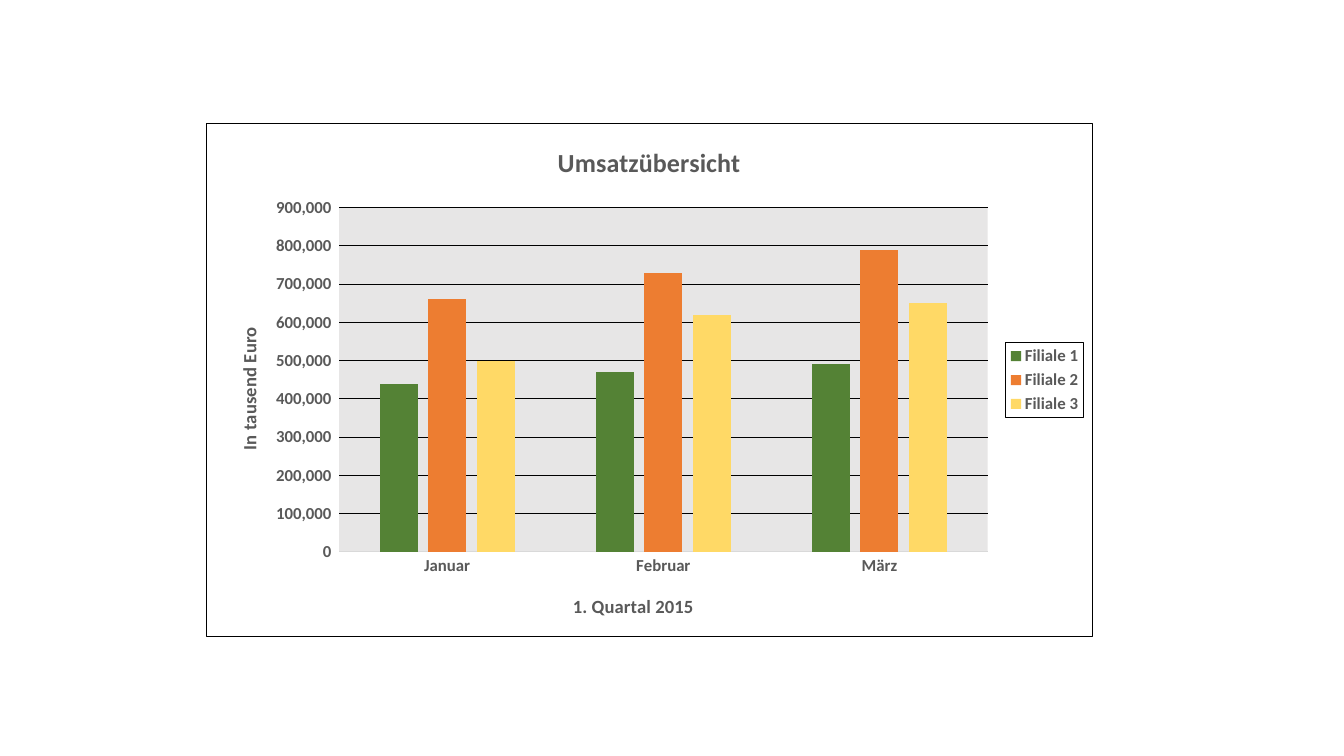
"""Builds a slide with a clustered column chart of first-quarter sales by branch."""
from dataclasses import dataclass

from lxml.etree import SubElement
from pptx import Presentation
from pptx.chart.data import CategoryChartData
from pptx.dml.color import RGBColor
from pptx.enum.chart import XL_CHART_TYPE, XL_LEGEND_POSITION, XL_TICK_MARK
from pptx.oxml import parse_xml
from pptx.oxml.ns import nsdecls, qn
from pptx.util import Pt


@dataclass
class Theme:
    face: str = "Calibri"
    ink: str = "595959"
    rule: str = "000000"
    base: str = "D9D9D9"
    wall: str = "E7E6E6"
    bars: tuple = ("548235", "ED7D31", "FFD966")
    head: float = 18.6
    name: float = 13.3
    text: float = 12
    line: float = 0.75


theme = Theme()


def style(font, size):
    font.name = theme.face
    font.size = Pt(size)
    font.bold = True
    font.color.rgb = RGBColor.from_string(theme.ink)


def place(node, index, **spots):
    for old in node.findall(qn("c:layout")):
        node.remove(old)
    layout = parse_xml(f"<c:layout {nsdecls('c')}/>")
    manual = SubElement(layout, qn("c:manualLayout"))
    for key, value in spots.items():
        SubElement(manual, qn(f"c:{key}")).set("val", str(value))
    node.insert(index, layout)


deck = Presentation()
deck.slide_width, deck.slide_height = Pt(960), Pt(540)
slide = deck.slides.add_slide(deck.slide_layouts[6])

data = CategoryChartData()
data.categories = ["Januar", "Februar", "März"]
data.add_series("Filiale 1", (440000, 470000, 490000))
data.add_series("Filiale 2", (660000, 730000, 790000))
data.add_series("Filiale 3", (500000, 620000, 650000))
chart = slide.shapes.add_chart(
    XL_CHART_TYPE.COLUMN_CLUSTERED, Pt(147), Pt(88), Pt(633.5), Pt(367), data
).chart
style(chart.font, theme.text)

plot = chart.plots[0]
plot.gap_width = 214
plot.overlap = -27
plot.vary_by_categories = False
for series, color in zip(plot.series, theme.bars):
    series.format.fill.solid()
    series.format.fill.fore_color.rgb = RGBColor.from_string(color)

months, sales = chart.category_axis, chart.value_axis
for axis in (months, sales):
    axis.major_tick_mark = XL_TICK_MARK.NONE
    axis.minor_tick_mark = XL_TICK_MARK.NONE
    style(axis.tick_labels.font, theme.text)
months.format.line.color.rgb = RGBColor.from_string(theme.base)
months.format.line.width = Pt(theme.line)

sales.minimum_scale = 0
sales.maximum_scale = 900000
sales.major_unit = 100000
sales.tick_labels.number_format = r"#,##0_);[Red]\(#,##0\)"
sales.tick_labels.number_format_is_linked = False
sales.format.line.fill.background()
grid = sales.major_gridlines.format.line
grid.color.rgb = RGBColor.from_string(theme.rule)
grid.width = Pt(theme.line)

chart.has_title = True
for title, text, size in (
    (chart.chart_title, "Umsatzübersicht", theme.head),
    (months.axis_title, "1. Quartal 2015", theme.name),
    (sales.axis_title, "In tausend Euro", theme.name),
):
    title.text_frame.text = text
    style(title.text_frame.paragraphs[0].runs[0].font, size)
turn = sales.axis_title.text_frame._txBody.find(qn("a:bodyPr"))
turn.set("rot", "-5400000")
turn.set("vert", "horz")

chart.has_legend = True
legend = chart.legend
legend.position = XL_LEGEND_POSITION.RIGHT
legend.include_in_layout = False
style(legend.font, theme.text)

space = chart._chartSpace
area = space.chart.plotArea
place(area, 0, layoutTarget="inner", xMode="edge", yMode="edge",
      x=0.15, y=0.164, w=0.732, h=0.671)
place(months.axis_title._element, 1, xMode="edge", yMode="edge", x=0.41, y=0.91)
place(sales.axis_title._element, 1, xMode="edge", yMode="edge", x=0.03, y=0.39)

area.append(parse_xml(
    f'<c:spPr {nsdecls("c", "a")}><a:solidFill><a:srgbClr val="{theme.wall}"/>'
    "</a:solidFill><a:ln><a:noFill/></a:ln></c:spPr>"
))
for node in (space, legend._element):
    node.find(qn("c:txPr")).addprevious(parse_xml(
        f'<c:spPr {nsdecls("c", "a")}><a:noFill/><a:ln w="{Pt(theme.line)}"><a:solidFill>'
        f'<a:srgbClr val="{theme.rule}"/></a:solidFill></a:ln></c:spPr>'
    ))

deck.save("out.pptx")
